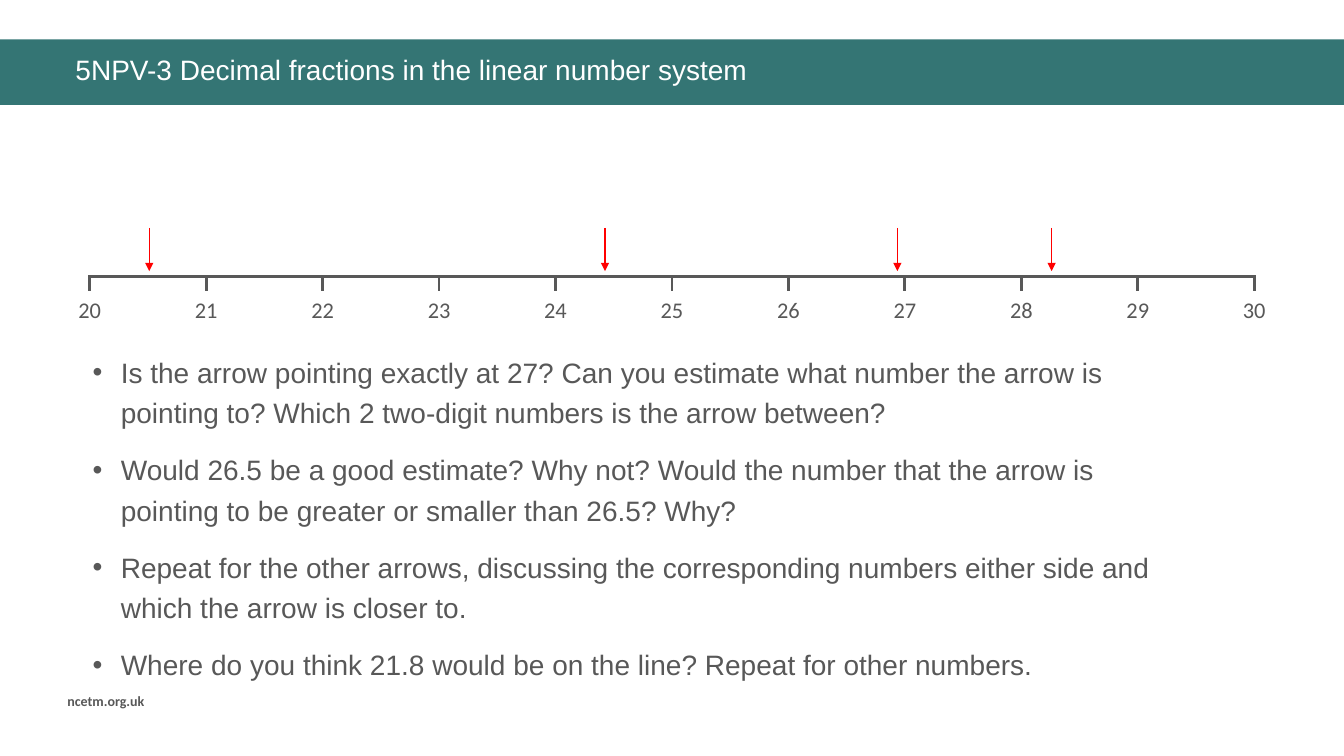
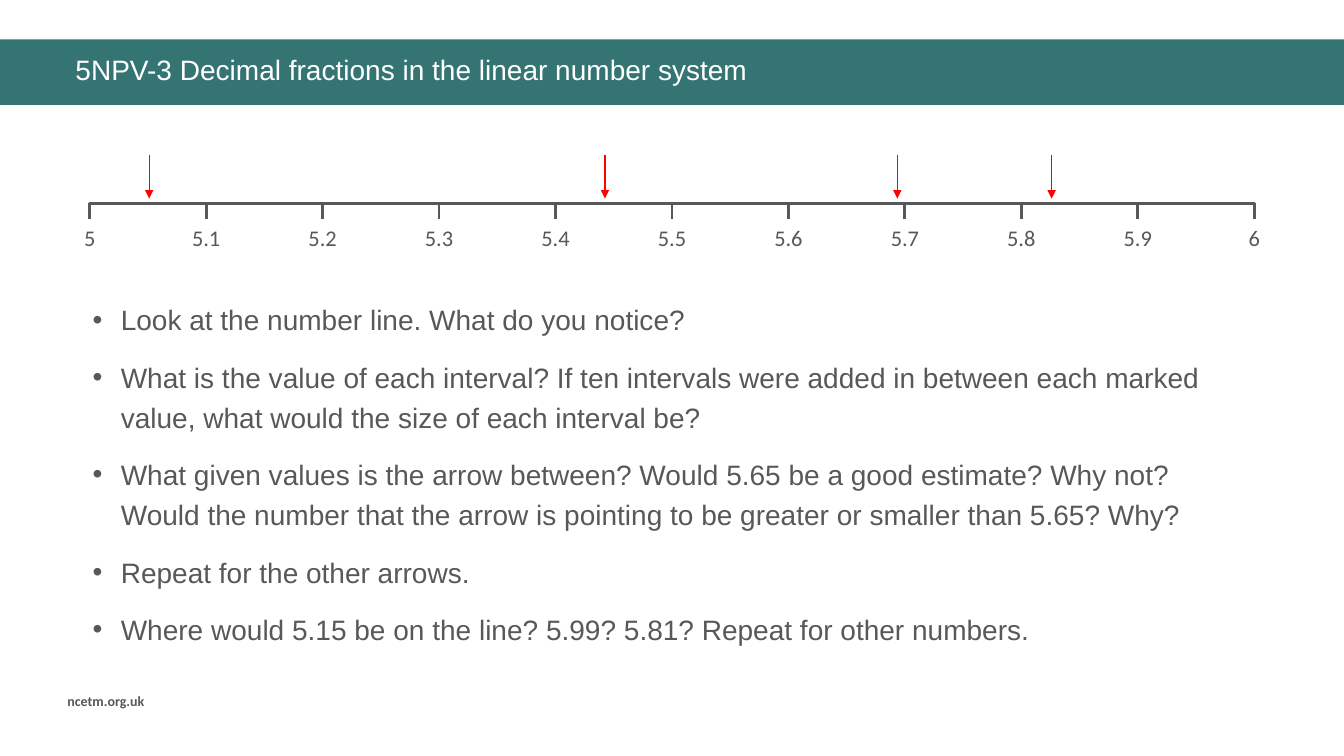
import pptx
import pptx.dml.color
import pptx.enum.shapes
import pptx.enum.text
import pptx.oxml.ns
import pptx.util
from lxml import etree

Inches = pptx.util.Inches
Pt = pptx.util.Pt
qn = pptx.oxml.ns.qn


def rgb(hex_colour):
    return pptx.dml.color.RGBColor.from_string(hex_colour)


class Deck:
    TEAL, GREY, WHITE, RED = "347574", "585858", "FFFFFF", "FF0000"
    WIDTH, HEIGHT = 13.33, 7.5
    LINE_START, LINE_END, INTERVALS = 0.89, 12.44, 10
    ARROW_POSITIONS = (1.48, 6, 8.9, 10.43)

    def __init__(self):
        self.prs = pptx.Presentation()
        self.prs.slide_width = Inches(self.WIDTH)
        self.prs.slide_height = Inches(self.HEIGHT)
        self.slide = None

    def new_slide(self, title):
        """Start a slide with the shared band, footer and title."""
        self.slide = self.prs.slides.add_slide(self.prs.slide_layouts[6])
        self.band(0.39, 0.65)
        self.text("ncetm.org.uk", 0.57, 6.82, 1.21, 0.27,
                  size=10, font="Calibri", bold=True)
        self.text(title, 0.65, 0.51, 12.32, 0.47,
                  colour=self.WHITE, line_spacing=0.9)

    def band(self, top, height):
        band = self.slide.shapes.add_shape(
            pptx.enum.shapes.MSO_SHAPE.RECTANGLE,
            0, Inches(top), Inches(self.WIDTH), Inches(height))
        band.shadow.inherit = False
        band.fill.solid()
        band.fill.fore_color.rgb = rgb(self.TEAL)
        band.line.fill.background()

    def text(self, content, left, top, width, height, size=20, font="Arial",
             colour=GREY, bold=False, centred=False, line_spacing=None,
             gap=0, bulleted=False):
        """Add a text box; content is one string or a list of paragraphs."""
        box = self.slide.shapes.add_textbox(
            Inches(left), Inches(top), Inches(width), Inches(height))
        frame = box.text_frame
        frame.word_wrap = True
        paragraphs = [content] if isinstance(content, str) else content
        for index, wording in enumerate(paragraphs):
            paragraph = frame.add_paragraph() if index else frame.paragraphs[0]
            if bulleted:
                self.add_bullet(paragraph, colour)
            if centred:
                paragraph.alignment = pptx.enum.text.PP_ALIGN.CENTER
            if line_spacing:
                paragraph.line_spacing = line_spacing
            if gap:
                paragraph.space_before = Pt(gap if index else 0)
                paragraph.space_after = Pt(gap)
            run = paragraph.add_run()
            run.text = wording
            run.font.size = Pt(size)
            run.font.name = font
            run.font.bold = bold
            run.font.color.rgb = rgb(colour)

    @staticmethod
    def add_bullet(paragraph, colour, indent=0.28):
        properties = paragraph._p.get_or_add_pPr()
        properties.set("marL", str(Inches(indent)))
        properties.set("indent", str(-Inches(indent)))
        bullet_colour = etree.SubElement(properties, qn("a:buClr"))
        etree.SubElement(bullet_colour, qn("a:srgbClr"), val=colour)
        etree.SubElement(properties, qn("a:buFont"), typeface="Arial")
        etree.SubElement(properties, qn("a:buChar"), char="•")

    def line(self, x1, y1, x2, y2, weight, colour=GREY, arrow=False):
        line = self.slide.shapes.add_connector(
            pptx.enum.shapes.MSO_CONNECTOR.STRAIGHT,
            Inches(x1), Inches(y1), Inches(x2), Inches(y2))
        line.line.width = Pt(weight)
        line.line.color.rgb = rgb(colour)
        if arrow:
            etree.SubElement(line.line._get_or_add_ln(), qn("a:tailEnd"),
                             type="triangle")
        etree.SubElement(line._element.spPr, qn("a:effectLst"))

    def number_line(self, y, first, step):
        """Draw the axis with its ticks and values, and the arrows above it."""
        spacing = (self.LINE_END - self.LINE_START) / self.INTERVALS
        label_width = 1.2
        self.line(self.LINE_START - 0.01, y, self.LINE_END + 0.01, y, 2.25)
        for index in range(self.INTERVALS + 1):
            x = self.LINE_START + index * spacing
            self.line(x, y - 0.01, x, y + 0.15, 2)
            self.text(f"{first + index * step:g}", x - label_width / 2, y + 0.15,
                      label_width, 0.37, size=16, font="Calibri", centred=True)
        for x in self.ARROW_POSITIONS:
            self.line(x, y - 0.48, x, y - 0.05, 1, self.RED, arrow=True)

    def questions(self, wording, top, width, height):
        self.text(wording, 0.82, top, width, height,
                  line_spacing=1.2, gap=6, bulleted=True)


def main():
    deck = Deck()
    title = "5NPV-3 Decimal fractions in the linear number system"

    deck.new_slide(title)
    deck.number_line(2.74, first=20, step=1)
    deck.questions([
        "Is the arrow pointing exactly at 27? Can you estimate what number the "
        "arrow is pointing to? Which 2 two-digit numbers is the arrow between?",
        "Would 26.5 be a good estimate? Why not? Would the number that the arrow "
        "is pointing to be greater or smaller than 26.5? Why?",
        "Repeat for the other arrows, discussing the corresponding numbers "
        "either side and which the arrow is closer to.",
        "Where do you think 21.8 would be on the line? Repeat for other numbers.",
    ], 3.41, 11.07, 3.38)

    deck.new_slide(title)
    deck.number_line(2.02, first=5, step=0.1)
    deck.questions([
        "Look at the number line. What do you notice?",
        "What is the value of each interval? If ten intervals were added in "
        "between each marked value, what would the size of each interval be?",
        "What given values is the arrow between? Would 5.65 be a good estimate? "
        "Why not? Would the number that the arrow is pointing to be greater or "
        "smaller than 5.65? Why?",
        "Repeat for the other arrows.",
        "Where would 5.15 be on the line? 5.99? 5.81? Repeat for other numbers.",
    ], 2.89, 11.63, 4.1)

    deck.prs.save("out.pptx")


if __name__ == "__main__":
    main()
